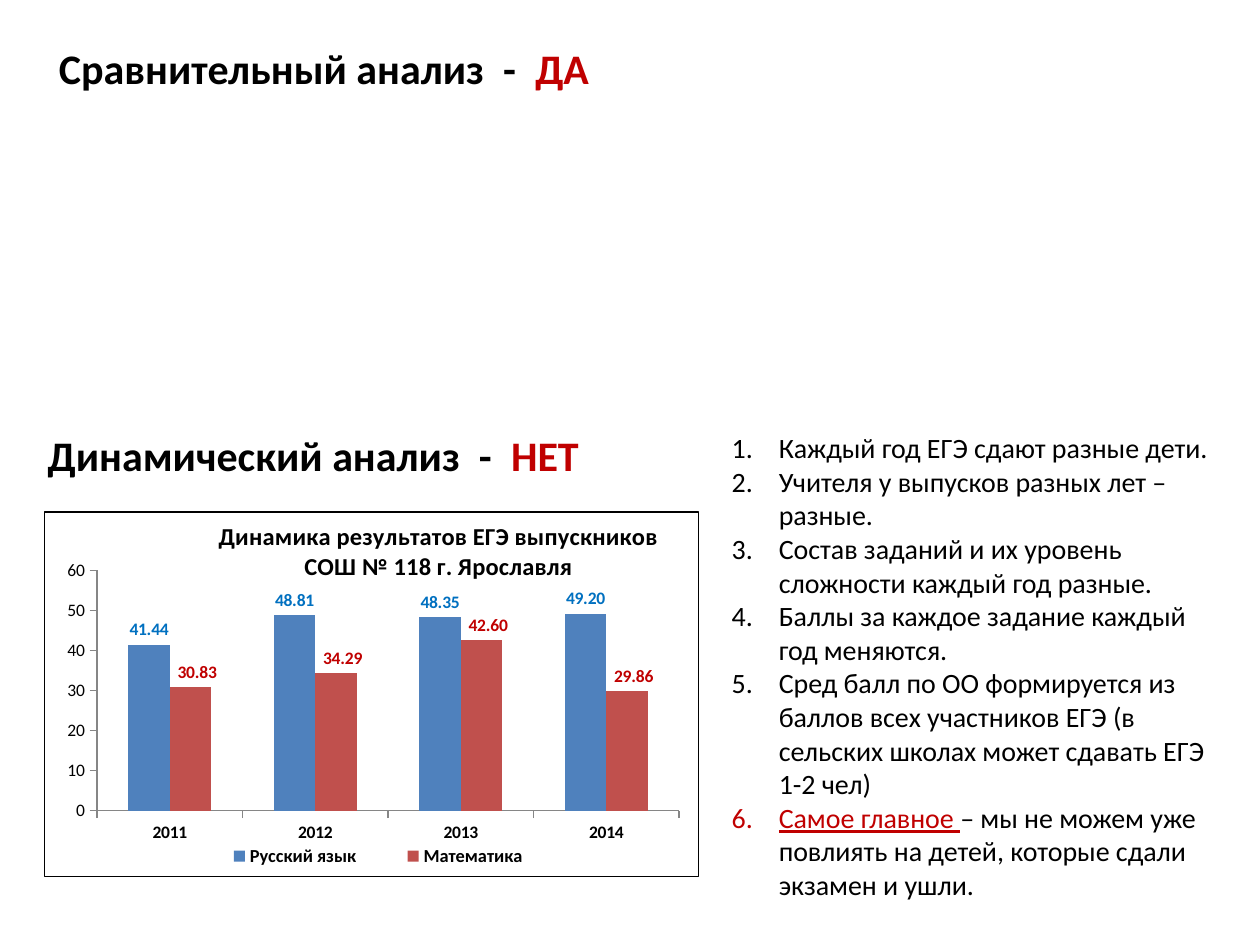
from dataclasses import dataclass

from lxml import etree
from pptx import Presentation
from pptx.chart import data as cd
from pptx.dml.color import RGBColor as Rgb
from pptx.enum import chart as ce, text as te
from pptx.oxml.ns import qn
from pptx.util import Cm, Pt


@dataclass(frozen=True)
class Theme:
    face: str = "Calibri"
    ink: str = "000000"
    red: str = "C00000"
    blue: str = "0070C0"
    axis: str = "868686"
    head: float = 24
    body: float = 16
    title: float = 14
    key: float = 10.5
    small: float = 10
    line: float = 0.75


@dataclass(frozen=True)
class Box:
    x: float
    y: float
    w: float
    h: float

    def lengths(self) -> tuple:
        return Cm(self.x), Cm(self.y), Cm(self.w), Cm(self.h)


@dataclass(frozen=True)
class Run:
    text: str
    hue: str
    line: bool = False


@dataclass(frozen=True)
class Row:
    name: str
    vals: tuple
    fill: str
    hue: str
    shift: tuple = ()


T = Theme()
FORMAT = "#,##0.00"
YEARS = ("2011", "2012", "2013", "2014")
TITLE = "Динамика результатов ЕГЭ выпускников\nСОШ № 118 г. Ярославля"
ROWS = (
    Row("Русский язык", (41.44, 48.81, 48.35, 49.20), "4F81BD", T.blue),
    Row("Математика", (30.83, 34.29, 42.60, 29.86), "C0504D", T.red,
        (0.01, 0.01, 0.01, 0.01)),
)
HEADS = (
    (Box(0.94, 0.74, 23.19, 1.27), "Сравнительный анализ  -  ", "ДА"),
    (Box(0.71, 8.53, 23.19, 1.27), "Динамический анализ  -  ", "НЕТ"),
)
POINTS = (
    "Каждый год ЕГЭ сдают разные дети.",
    "Учителя у выпусков разных лет – разные.",
    "Состав заданий и их уровень сложности каждый год разные.",
    "Баллы за каждое задание каждый год меняются.",
    "Сред балл по ОО формируется из баллов всех участников ЕГЭ "
    "(в сельских школах может сдавать ЕГЭ 1-2 чел)",
)
LAST = [Run("Самое главное ", T.red, True),
        Run("– мы не можем уже повлиять на детей, которые сдали экзамен и ушли.", T.ink)]


def apply(item, values: dict) -> None:
    for key, val in values.items():
        setattr(item, key, val)


def style(font, size: float, hue: str, **more) -> None:
    apply(font, {"name": T.face, "size": Pt(size), **more})
    font.color.rgb = Rgb.from_string(hue)


def write(slide, box: Box, lines: list, size: float, bold: bool, listed: bool = False) -> None:
    frame = slide.shapes.add_textbox(*box.lengths()).text_frame
    apply(frame, {"word_wrap": True, "auto_size": te.MSO_AUTO_SIZE.SHAPE_TO_FIT_TEXT})
    for n, runs in enumerate(lines):
        para = frame.add_paragraph() if n else frame.paragraphs[0]
        for part in runs:
            run = para.add_run()
            run.text = part.text
            style(run.font, size, part.hue, bold=bold, underline=part.line)
        if listed:
            props = para._p.get_or_add_pPr()
            props.set("marL", str(Cm(0.95)))
            props.set("indent", str(-Cm(0.95)))
            etree.SubElement(props, qn("a:buAutoNum"), type="arabicPeriod")


def place(node, after: str, spots: dict) -> None:
    for old in node.findall(qn("c:layout")):
        node.remove(old)
    lay = etree.Element(qn("c:layout"))
    man = etree.SubElement(lay, qn("c:manualLayout"))
    for tag, val in spots.items():
        etree.SubElement(man, qn(f"c:{tag}"), val=str(val))
    node.insert(node.index(node.find(qn(after))) + 1 if after else 0, lay)


def label(item, hue: str) -> None:
    style(item.font, T.small, hue, bold=True)
    item.position = ce.XL_LABEL_POSITION.OUTSIDE_END


def paint(series, row: Row) -> None:
    series.format.fill.solid()
    series.format.fill.fore_color.rgb = Rgb.from_string(row.fill)
    marks = series.data_labels
    label(marks, row.hue)
    apply(marks, {"show_value": True, "number_format": FORMAT,
                  "number_format_is_linked": False})
    for n, dx in enumerate(row.shift):
        label(series.points[n].data_label, row.hue)
        node = marks._element.findall(qn("c:dLbl"))[n]
        place(node, "c:idx", {"x": dx, "y": 0})
        form = etree.Element(qn("c:numFmt"), formatCode=FORMAT, sourceLinked="0")
        node.find(qn("c:layout")).addnext(form)


def frame(root) -> None:
    props = etree.Element(qn("c:spPr"))
    for tag, hue, more in (("a:solidFill", "FFFFFF", {}), ("a:ln", T.ink, {"w": str(Pt(T.line))})):
        node = etree.SubElement(props, qn(tag), more)
        fill = node if tag == "a:solidFill" else etree.SubElement(node, qn("a:solidFill"))
        etree.SubElement(fill, qn("a:srgbClr"), val=hue)
    root.find(qn("c:chart")).addnext(props)


def graph(slide, box: Box) -> None:
    data = cd.CategoryChartData()
    data.categories = YEARS
    for row in ROWS:
        data.add_series(row.name, row.vals)
    kind = ce.XL_CHART_TYPE.COLUMN_CLUSTERED
    chart = slide.shapes.add_chart(kind, *box.lengths(), data).chart
    style(chart.font, T.small, T.ink)
    chart.has_title = chart.has_legend = True
    head = chart.chart_title.text_frame
    head.text = TITLE
    for para in head.paragraphs:
        style(para.runs[0].font, T.title, T.ink, bold=True)
    apply(chart.legend, {"position": ce.XL_LEGEND_POSITION.BOTTOM, "include_in_layout": False})
    style(chart.legend.font, T.key, T.ink, bold=True)
    plot = chart.plots[0]
    apply(plot, {"gap_width": 150, "overlap": 0, "vary_by_categories": False})
    for series, row in zip(plot.series, ROWS):
        paint(series, row)
    for axis, bold in ((chart.category_axis, True), (chart.value_axis, False)):
        apply(axis, {"has_major_gridlines": False, "major_tick_mark": ce.XL_TICK_MARK.OUTSIDE,
                     "minor_tick_mark": ce.XL_TICK_MARK.NONE})
        style(axis.tick_labels.font, T.small, T.ink, bold=bold)
        axis.format.line.color.rgb = Rgb.from_string(T.axis)
        axis.format.line.width = Pt(T.line)
    apply(chart.value_axis, {"minimum_scale": 0, "maximum_scale": 60, "major_unit": 10})
    root = chart.element
    frame(root)
    edge = {"xMode": "edge", "yMode": "edge"}
    body = root.find(qn("c:chart"))
    place(body.find(qn("c:title")), "c:tx", {**edge, "x": 0.26, "y": 0.01})
    place(body.find(qn("c:legend")), "c:legendPos",
          {**edge, "x": 0.22, "y": 0.91, "w": 0.58, "h": 0.07})
    place(body.find(qn("c:plotArea")), "",
          {"layoutTarget": "inner", **edge, "x": 0.08, "y": 0.16, "w": 0.89, "h": 0.66})


def main() -> None:
    deck = Presentation()
    apply(deck, {"slide_width": Cm(25.4), "slide_height": Cm(19.05)})
    slide = deck.slides.add_slide(deck.slide_layouts[6])
    for box, lead, mark in HEADS:
        write(slide, box, [[Run(lead, T.ink), Run(mark, T.red)]], T.head, True)
    graph(slide, Box(0.89, 10.31, 13.21, 7.37))
    lines = [[Run(point, T.ink)] for point in POINTS] + [LAST]
    write(slide, Box(14.5, 8.56, 10.21, 10.52), lines, T.body, False, True)
    deck.save("out.pptx")


if __name__ == "__main__":
    main()
